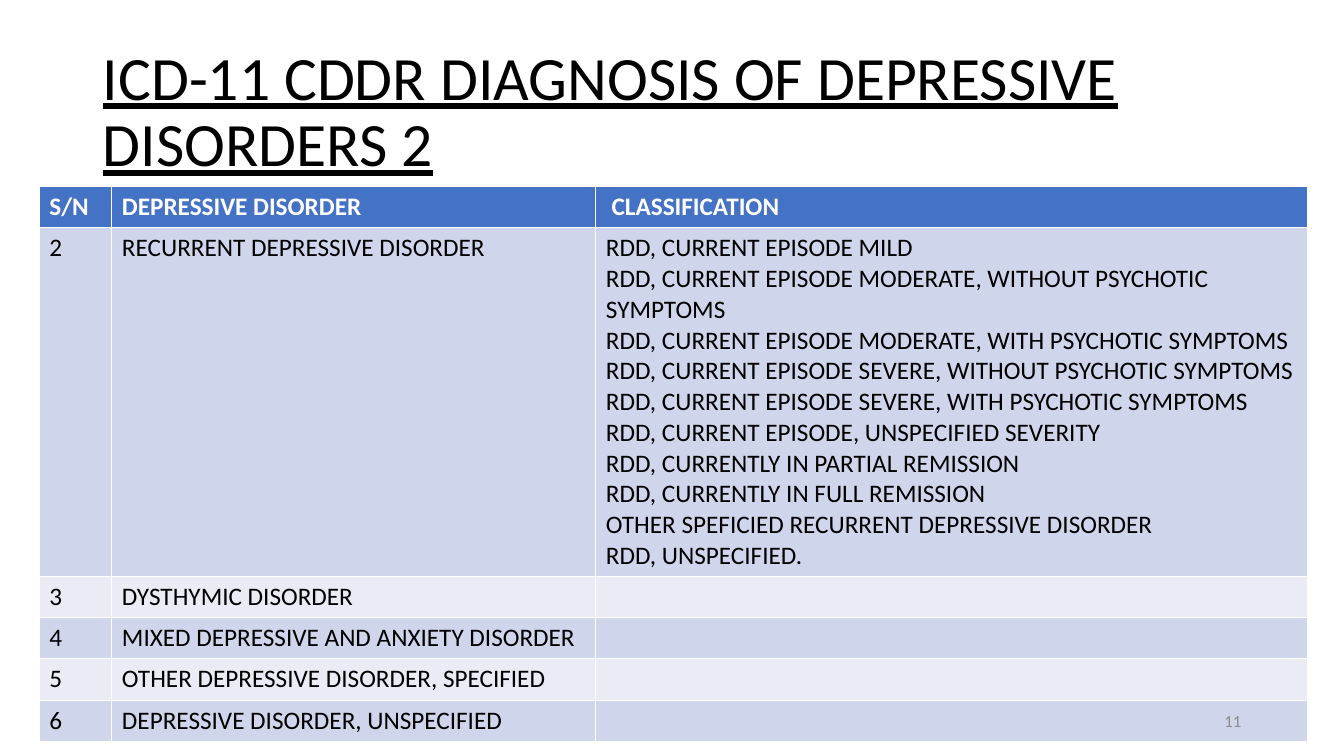
from pptx import Presentation
from pptx.dml.color import RGBColor
from pptx.enum.text import MSO_ANCHOR, MSO_AUTO_SIZE, PP_ALIGN
from pptx.util import Inches, Pt

TITLE = "ICD-11 CDDR DIAGNOSIS OF DEPRESSIVE DISORDERS 2"
PAGE_NUMBER = "11"
HEADER = ("S/N", "DEPRESSIVE DISORDER", " CLASSIFICATION")
RECURRENT_CLASSES = [
    "RDD, CURRENT EPISODE MILD",
    "RDD, CURRENT EPISODE MODERATE, WITHOUT PSYCHOTIC SYMPTOMS",
    "RDD, CURRENT EPISODE MODERATE, WITH PSYCHOTIC SYMPTOMS",
    "RDD, CURRENT EPISODE SEVERE, WITHOUT PSYCHOTIC SYMPTOMS",
    "RDD, CURRENT EPISODE SEVERE, WITH PSYCHOTIC SYMPTOMS",
    "RDD, CURRENT EPISODE, UNSPECIFIED SEVERITY",
    "RDD, CURRENTLY IN PARTIAL REMISSION",
    "RDD, CURRENTLY IN FULL REMISSION",
    "OTHER SPEFICIED RECURRENT DEPRESSIVE DISORDER",
    "RDD, UNSPECIFIED.",
]
DISORDERS = [
    ("2", "RECURRENT DEPRESSIVE DISORDER", "\n".join(RECURRENT_CLASSES)),
    ("3", "DYSTHYMIC DISORDER", ""),
    ("4", "MIXED DEPRESSIVE AND ANXIETY DISORDER", ""),
    ("5", "OTHER DEPRESSIVE DISORDER, SPECIFIED", ""),
    ("6", "DEPRESSIVE DISORDER, UNSPECIFIED", ""),
]
ROWS = [HEADER] + DISORDERS

FONT = "Calibri"
BLACK = RGBColor(0x00, 0x00, 0x00)
WHITE = RGBColor(0xFF, 0xFF, 0xFF)
GREY = RGBColor(0x8C, 0x8C, 0x8C)
HEADER_BLUE = RGBColor(0x44, 0x72, 0xC4)
BANDS = (RGBColor(0xE9, 0xEB, 0xF5), RGBColor(0xCF, 0xD5, 0xEA))

SLIDE_WIDTH, SLIDE_HEIGHT = 13.33, 7.5
MARGIN = 0.92
TITLE_TOP, TITLE_HEIGHT = 0.4, 1.45
TABLE_LEFT, TABLE_TOP = 0.39, TITLE_TOP + TITLE_HEIGHT
COLUMN_WIDTHS = (0.72, 4.8, 7.06)
ROW_HEIGHT, RECURRENT_HEIGHT = 0.41, 3.45
NUMBER_WIDTH, NUMBER_HEIGHT = 3, 0.4


def format_text(frame, size, color, bold=False, underline=False):
    for para in frame.paragraphs:
        for span in para.runs:
            font = span.font
            font.name, font.size, font.bold = FONT, Pt(size), bold
            font.underline = underline
            font.color.rgb = color


def place(shape, left, top, width, height):
    shape.left, shape.top = Inches(left), Inches(top)
    shape.width, shape.height = Inches(width), Inches(height)


def add_title(page):
    title = page.shapes.title
    place(title, MARGIN, TITLE_TOP, SLIDE_WIDTH - 2 * MARGIN, TITLE_HEIGHT)
    frame = title.text_frame
    frame.text = TITLE
    frame.word_wrap = True
    frame.auto_size = MSO_AUTO_SIZE.NONE
    frame.vertical_anchor = MSO_ANCHOR.MIDDLE
    frame.paragraphs[0].alignment = PP_ALIGN.LEFT
    frame.paragraphs[0].line_spacing = 0.9
    format_text(frame, 44, BLACK, underline=True)


def add_disorder_table(page):
    heights = [ROW_HEIGHT, RECURRENT_HEIGHT] + [ROW_HEIGHT] * (len(ROWS) - 2)
    table = page.shapes.add_table(
        len(ROWS), len(HEADER), Inches(TABLE_LEFT), Inches(TABLE_TOP),
        Inches(sum(COLUMN_WIDTHS)), Inches(sum(heights))).table
    for column, width in zip(table.columns, COLUMN_WIDTHS):
        column.width = Inches(width)
    for index, (row, height, texts) in enumerate(zip(table.rows, heights, ROWS)):
        row.height = Inches(height)
        is_header = index == 0
        for cell, text in zip(row.cells, texts):
            cell.text_frame.text = text
            cell.fill.solid()
            cell.fill.fore_color.rgb = HEADER_BLUE if is_header else BANDS[index % 2]
            format_text(cell.text_frame, 18, WHITE if is_header else BLACK, bold=is_header)


def add_page_number(page):
    box = page.shapes.add_textbox(0, 0, 0, 0)
    place(box, SLIDE_WIDTH - MARGIN - NUMBER_WIDTH, 6.95, NUMBER_WIDTH, NUMBER_HEIGHT)
    frame = box.text_frame
    frame.text = PAGE_NUMBER
    frame.word_wrap = True
    frame.vertical_anchor = MSO_ANCHOR.MIDDLE
    frame.paragraphs[0].alignment = PP_ALIGN.RIGHT
    format_text(frame, 12, GREY)


def main():
    deck = Presentation()
    deck.slide_width, deck.slide_height = Inches(SLIDE_WIDTH), Inches(SLIDE_HEIGHT)
    page = deck.slides.add_slide(deck.slide_layouts.get_by_name("Title Only"))
    add_title(page)
    add_disorder_table(page)
    add_page_number(page)
    deck.save("out.pptx")


if __name__ == "__main__":
    main()
